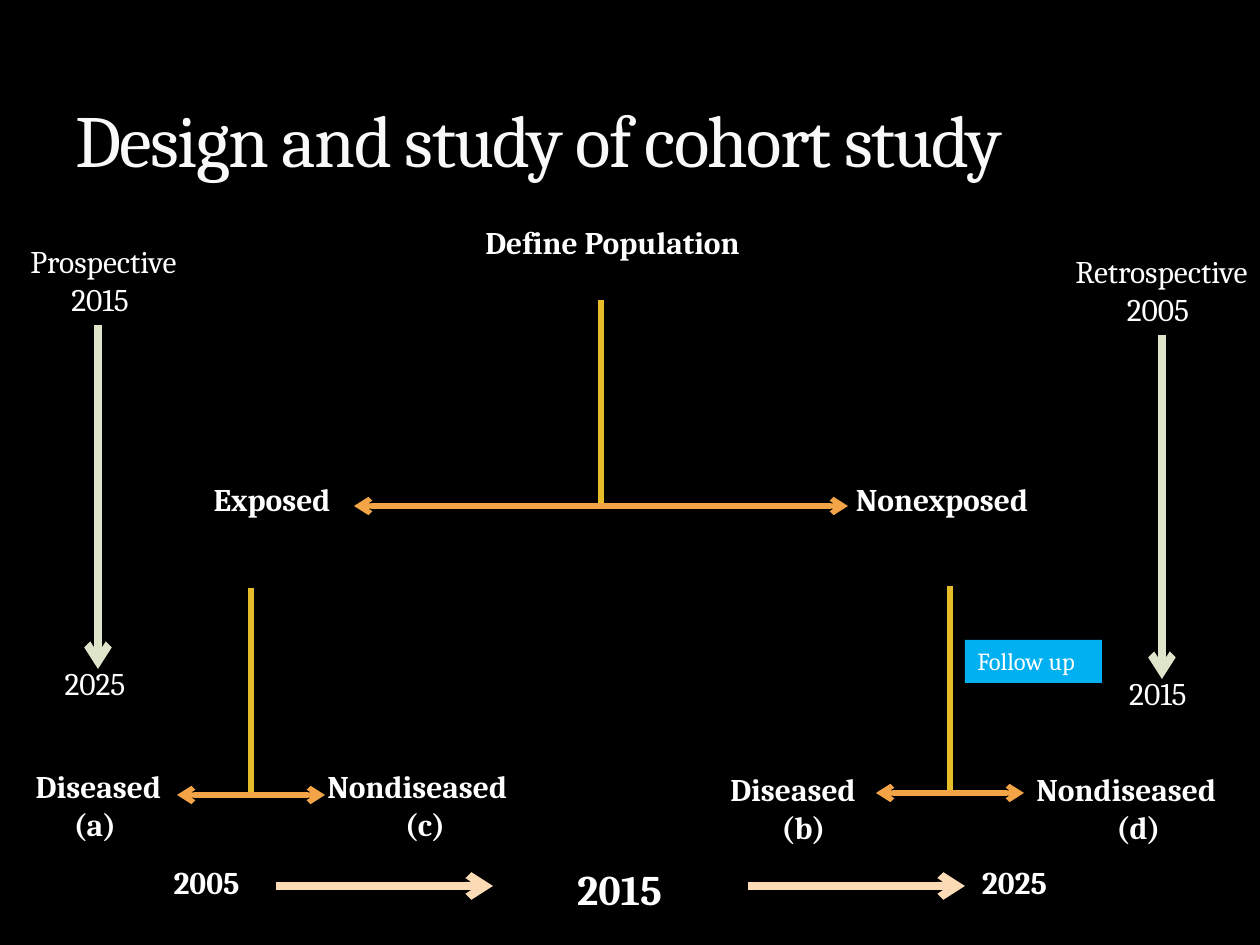
import pptx
import pptx.util
import pptx.dml.color
import pptx.enum.shapes
import pptx.enum.text
import pptx.oxml
import pptx.oxml.ns

PX = 914400 // 126
FONT = "Cambria"
WHITE, GOLD, AMBER = "FFFFFF", "E7BC29", "F3A447"
GREEN, PEACH, BLUE = "DFE5CA", "FADBB5", "00B0F0"
ALIGN = pptx.enum.text.PP_ALIGN

TITLE = "Design and study of cohort study"

# Text: left, top, width, height, lines, size, bold, first line centred
LABELS = [
    (473, 217, 315, 83, ["Define Population"], 18, True, False),
    (118, 474, 315, 83, ["Exposed "], 18, True, True),
    (788, 474, 315, 83, ["Nonexposed "], 18, True, True),
    (-10, 761, 217, 89, ["Diseased", "(a) "], 18, True, True),
    (315, 761, 227, 89, ["Nondiseased", "(c) "], 18, True, False),
    (718, 764, 178, 89, ["Diseased", "(b) "], 18, True, False),
    (1024, 764, 236, 89, ["Nondiseased", "(d) "], 18, True, False),
    (0, 236, 207, 89, ["Prospective 2015 "], 18, False, True),
    (0, 658, 197, 50, ["2025 "], 18, False, True),
    (1053, 246, 217, 89, ["Retrospective 2005 "], 18, False, True),
    (1063, 668, 197, 50, ["2015 "], 18, False, True),
    (49, 857, 315, 50, ["2005"], 18, True, True),
    (462, 857, 315, 63, ["2015"], 24, True, True),
    (857, 857, 315, 50, ["2025"], 18, True, True),
]
FOLLOW = (965, 640, 137, 43, ["Follow up"], 14, False, False)

# Forks: stem x, top, bottom, reach of each arm
FORKS = [(601, 300, 506, 247), (251, 588, 795, 74), (950, 586, 793, 74)]

# Time arrows: x1, y1, x2, y2, colour
TIMES = [
    (98, 325, 98, 669, GREEN),
    (1162, 335, 1162, 679, GREEN),
    (276, 886, 493, 886, PEACH),
    (748, 886, 965, 886, PEACH),
]


def rgb(code):
    return pptx.dml.color.RGBColor.from_string(code)


def scale(*nums):
    return [n * PX for n in nums]


def style(run, size, bold=False, code=WHITE):
    run.font.name = FONT
    run.font.size = pptx.util.Pt(size)
    run.font.bold = bold
    run.font.color.rgb = rgb(code)


def write(shape, lines, size, bold, mid):
    frame = shape.text_frame
    frame.word_wrap = True
    frame.vertical_anchor = pptx.enum.text.MSO_ANCHOR.TOP
    frame.text = "\n".join(lines)
    for i, para in enumerate(frame.paragraphs):
        para.alignment = ALIGN.CENTER if mid or i else ALIGN.LEFT
        style(para.runs[0], size, bold)


def line(slide, ends, code, width, arrow=True):
    link = slide.shapes.add_connector(
        pptx.enum.shapes.MSO_CONNECTOR.STRAIGHT, *scale(*ends))
    link.line.color.rgb = rgb(code)
    link.line.width = pptx.util.Pt(width)
    if arrow:
        pptx.oxml.ns.qn("a:tailEnd")
        tail = pptx.oxml.parse_xml(
            '<a:tailEnd %s type="arrow"/>' % pptx.oxml.ns.nsdecls("a"))
        link.line._get_or_add_ln().append(tail)
    link._element.spPr.append(pptx.oxml.parse_xml(
        "<a:effectLst %s/>" % pptx.oxml.ns.nsdecls("a")))


def main():
    deck = pptx.Presentation()
    deck.slide_width, deck.slide_height = scale(1260, 945)
    slide = deck.slides.add_slide(deck.slide_layouts[5])
    slide.background.fill.solid()
    slide.background.fill.fore_color.rgb = rgb("000000")

    # Title
    title = slide.shapes.title
    title.left, title.top, title.width, title.height = scale(63, 21, 1134, 168)
    frame = title.text_frame
    frame.text = TITLE
    frame.word_wrap = True
    frame.auto_size = pptx.enum.text.MSO_AUTO_SIZE.NONE
    frame.vertical_anchor = pptx.enum.text.MSO_ANCHOR.BOTTOM
    para = frame.paragraphs[0]
    para.alignment = ALIGN.LEFT
    style(para.runs[0], 42, code="F9F9F9")
    para.runs[0].font._element.set("spc", "-100")

    # Forks of the study groups
    for x, top, low, reach in FORKS:
        line(slide, (x, top, x, low), GOLD, 3, arrow=False)
        for end in (x - reach, x + reach):
            line(slide, (x, low, end, low), AMBER, 3)

    # Time arrows
    for *ends, code in TIMES:
        line(slide, ends, code, 4.5)

    # Labels
    for *box, lines, size, bold, mid in LABELS:
        label = slide.shapes.add_textbox(*scale(*box))
        write(label, lines, size, bold, mid)

    # Follow-up tag
    *box, lines, size, bold, mid = FOLLOW
    tag = slide.shapes.add_shape(
        pptx.enum.shapes.MSO_SHAPE.RECTANGLE, *scale(*box))
    tag.shadow.inherit = False
    tag.fill.solid()
    tag.fill.fore_color.rgb = rgb(BLUE)
    tag.line.fill.background()
    write(tag, lines, size, bold, mid)

    deck.save("out.pptx")


if __name__ == "__main__":
    main()
